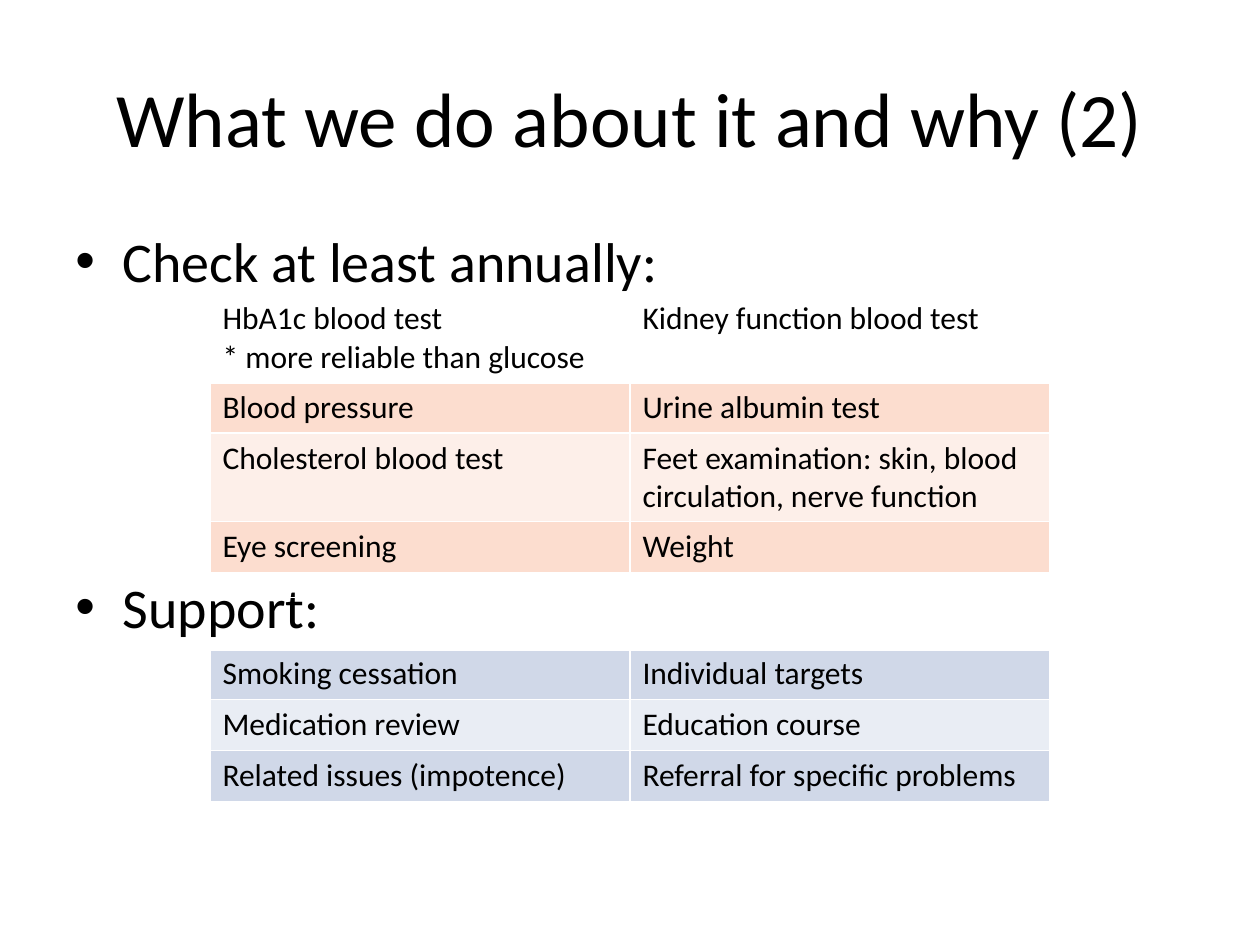
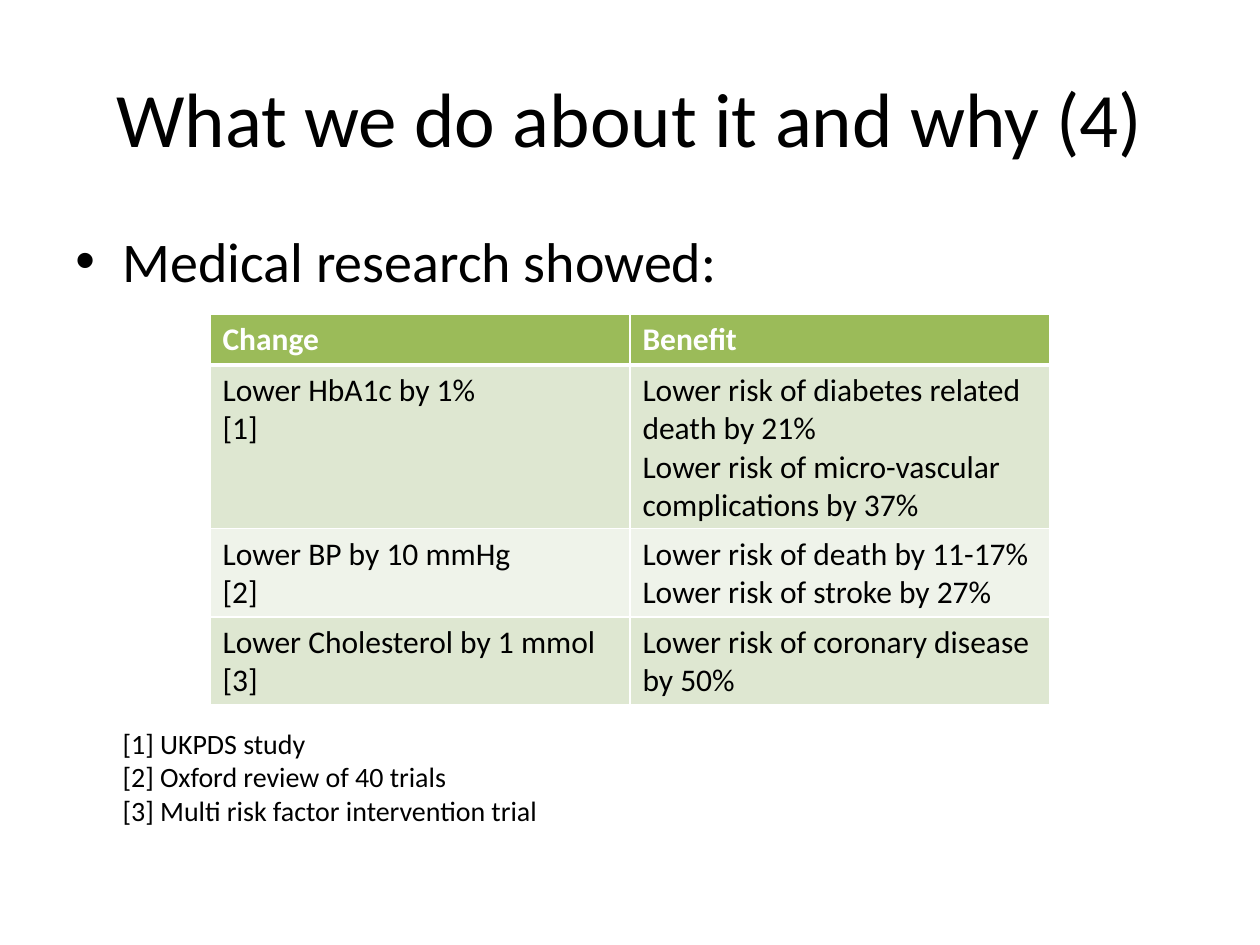
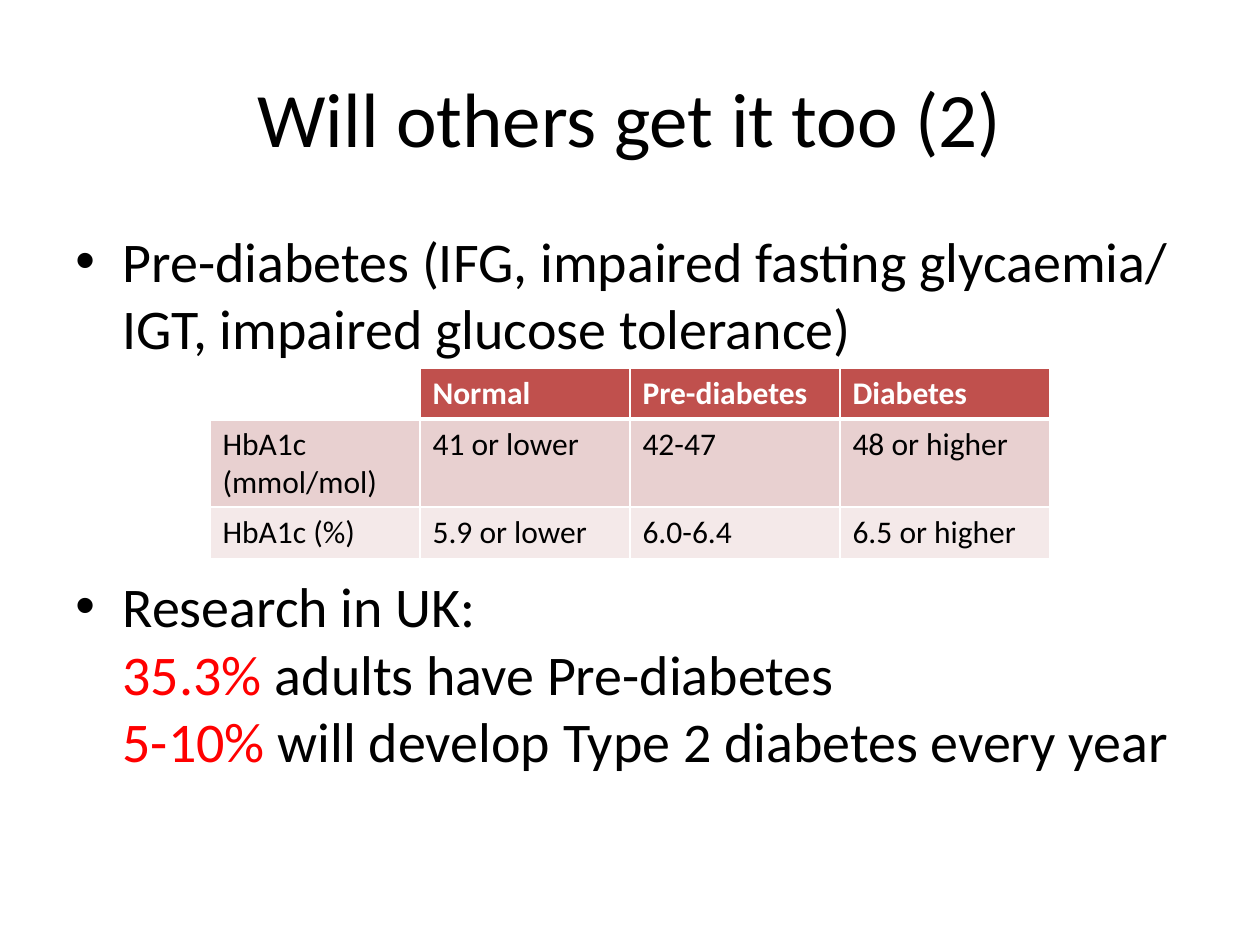
import dataclasses

import pptx
import pptx.dml.color
import pptx.enum.text
import pptx.oxml
import pptx.oxml.ns
import pptx.util
from pptx.util import Pt


@dataclasses.dataclass(frozen=True)
class Band:
    """Fills of one table: header row, then alternating body rows."""
    header: str
    header_text: str
    odd: str
    even: str


@dataclasses.dataclass(frozen=True)
class Theme:
    font: str = "Calibri"
    bullet_font: str = "Arial"
    text: str = "000000"
    accent: str = "FF0000"
    paper: str = "FFFFFF"
    title_size: float = 44
    body_size: float = 32
    cell_size: float = 18
    citation_size: float = 16
    orange: Band = Band("FFFFFF", "000000", "FCDDCF", "FDEFE9")
    blue: Band = Band("FFFFFF", "000000", "D0D8E8", "E9EDF4")
    green: Band = Band("9BBB59", "FFFFFF", "DEE7D1", "EFF3EA")
    red: Band = Band("C0504D", "FFFFFF", "E8D0D0", "F4E9E9")


THEME = Theme()
SLIDE_WIDTH, SLIDE_HEIGHT = 720, 540
MARGIN = 36
BODY_INDENT = 27
BULLET_GAP = 3
TABLE_LEFT, TABLE_WIDTH = 120, 480
ROW_HEIGHT = 29.2


class Deck:
    def __init__(self, theme):
        self.theme = theme
        self.presentation = pptx.Presentation()
        self.presentation.slide_width = Pt(SLIDE_WIDTH)
        self.presentation.slide_height = Pt(SLIDE_HEIGHT)
        self.slide = None
        self.body = None

    def new_slide(self, heading):
        blank = self.presentation.slide_layouts[6]
        self.slide = self.presentation.slides.add_slide(blank)
        title = self._text_area(21.6, 90)
        title.vertical_anchor = pptx.enum.text.MSO_ANCHOR.MIDDLE
        line = title.paragraphs[0]
        line.alignment = pptx.enum.text.PP_ALIGN.CENTER
        self._write(line, heading, self.theme.title_size)
        self.body = self._text_area(126, 356.4)

    def bullet(self, *parts, before=BULLET_GAP):
        """Add a bullet; each part is text or a (text, colour) pair."""
        item = self._body_paragraph(before, -BODY_INDENT)
        properties = item._p.get_or_add_pPr()
        for tag, key, value in (("buFont", "typeface", self.theme.bullet_font),
                                ("buChar", "char", "•")):
            mark = pptx.oxml.parse_xml(
                f'<a:{tag} {pptx.oxml.ns.nsdecls("a")} {key}="{value}"/>')
            properties.append(mark)
        for part in parts:
            text, color = (part, None) if isinstance(part, str) else part
            self._write(item, text, self.theme.body_size, color)

    def citations(self, text, before):
        self._write(self._body_paragraph(before, 0), text, self.theme.citation_size)

    def table(self, top, height, band, rows):
        """Add a banded table; a tuple in a cell holds several paragraphs."""
        columns = len(rows[0])
        frame = self.slide.shapes.add_table(
            len(rows), columns, Pt(TABLE_LEFT), Pt(top), Pt(TABLE_WIDTH), Pt(height))
        grid = frame.table
        grid.first_row = grid.horz_banding = False
        for column in grid.columns:
            column.width = Pt(TABLE_WIDTH / columns)
        for number, values in enumerate(rows):
            grid.rows[number].height = Pt(ROW_HEIGHT)
            for cell, content in zip(grid.rows[number].cells, values):
                self._fill_cell(cell, content, number, band)
        frame.height = Pt(height)

    def _fill_cell(self, cell, content, row, band):
        is_header = row == 0
        if content:
            cell.fill.solid()
            shade = band.header if is_header else band.odd if row % 2 else band.even
            cell.fill.fore_color.rgb = pptx.dml.color.RGBColor.from_string(shade)
        else:
            cell.fill.background()
        paragraphs = content if isinstance(content, tuple) else (content,)
        color = band.header_text if is_header else self.theme.text
        bold = is_header and band.header_text != self.theme.text
        for number, text in enumerate(paragraphs):
            frame = cell.text_frame
            line = frame.add_paragraph() if number else frame.paragraphs[0]
            line.font.size = Pt(self.theme.cell_size)
            self._write(line, text, self.theme.cell_size, color, bold)
        self._border_cell(cell, 3 if is_header else 1, 3 if row == 1 else 1)

    def _border_cell(self, cell, bottom, top):
        properties = cell._tc.get_or_add_tcPr()
        widths = {"lnL": 1, "lnR": 1, "lnT": top, "lnB": bottom}
        for position, (side, width) in enumerate(widths.items()):
            properties.insert(position, pptx.oxml.parse_xml(
                f'<a:{side} {pptx.oxml.ns.nsdecls("a")} w="{Pt(width)}"><a:solidFill>'
                f'<a:srgbClr val="{self.theme.paper}"/></a:solidFill></a:{side}>'))

    def _text_area(self, top, height):
        area = self.slide.shapes.add_textbox(
            Pt(MARGIN), Pt(top), Pt(SLIDE_WIDTH - 2 * MARGIN), Pt(height)).text_frame
        area.word_wrap = True
        return area

    def _body_paragraph(self, before, first_indent):
        paragraph = self.body.paragraphs[0]
        if paragraph.runs:
            paragraph = self.body.add_paragraph()
        paragraph.space_before = Pt(before)
        properties = paragraph._p.get_or_add_pPr()
        properties.set("marL", str(Pt(BODY_INDENT)))
        properties.set("indent", str(Pt(first_indent)))
        return paragraph

    def _write(self, paragraph, text, size, color=None, bold=False):
        """Add text as runs, with a line break at each newline."""
        for number, piece in enumerate(text.split("\n")):
            if number:
                paragraph.add_line_break()
            if piece:
                run = paragraph.add_run()
                run.text = piece
                run.font.name = self.theme.font
                run.font.size = Pt(size)
                run.font.bold = bold
                run.font.color.rgb = pptx.dml.color.RGBColor.from_string(
                    color or self.theme.text)


def main():
    deck = Deck(THEME)

    deck.new_slide("What we do about it and why (2)")
    deck.bullet("Check at least annually:")
    deck.bullet("Support:", before=159.2)
    deck.table(167.8, 159, THEME.orange, [
        ("HbA1c blood test\n* more reliable than glucose", "Kidney function blood test"),
        ("Blood pressure", "Urine albumin test"),
        ("Cholesterol blood test",
         "Feet examination: skin, blood circulation, nerve function"),
        ("Eye screening", "Weight"),
    ])
    deck.table(341.3, 116.8, THEME.blue, [
        ("", ""),
        ("Smoking cessation", "Individual targets"),
        ("Medication review", "Education course"),
        ("Related issues (impotence)", "Referral for specific problems"),
    ])

    deck.new_slide("What we do about it and why (4)")
    deck.bullet("Medical research showed:")
    deck.citations(
        "[1] UKPDS study\n[2] Oxford review of 40 trials\n"
        "[3] Multi risk factor intervention trial", before=247)
    deck.table(179.3, 224, THEME.green, [
        ("Change", "Benefit"),
        (("Lower HbA1c by 1%", "[1]"),
         ("Lower risk of diabetes related death by 21%",
          "Lower risk of micro-vascular complications by 37%")),
        (("Lower BP by 10 mmHg", "[2]"),
         ("Lower risk of death by 11-17%", "Lower risk of stroke by 27%")),
        (("Lower Cholesterol by 1 mmol", "[3]"),
         "Lower risk of coronary disease by 50%"),
    ])

    deck.new_slide("Will others get it too (2)")
    deck.bullet("Pre-diabetes (IFG, impaired fasting glycaemia/ "
                "IGT, impaired glucose tolerance)")
    deck.bullet("Research in UK:\n", ("35.3%", THEME.accent),
                " adults have Pre-diabetes\n", ("5-10%", THEME.accent),
                " will develop Type 2 diabetes every year", before=120.4)
    deck.table(210.2, 108.7, THEME.red, [
        ("", "Normal", "Pre-diabetes", "Diabetes"),
        ("HbA1c (mmol/mol)", "41 or lower", "42-47", "48 or higher"),
        ("HbA1c (%)", "5.9 or lower", "6.0-6.4", "6.5 or higher"),
    ])

    deck.presentation.save("out.pptx")


if __name__ == "__main__":
    main()
